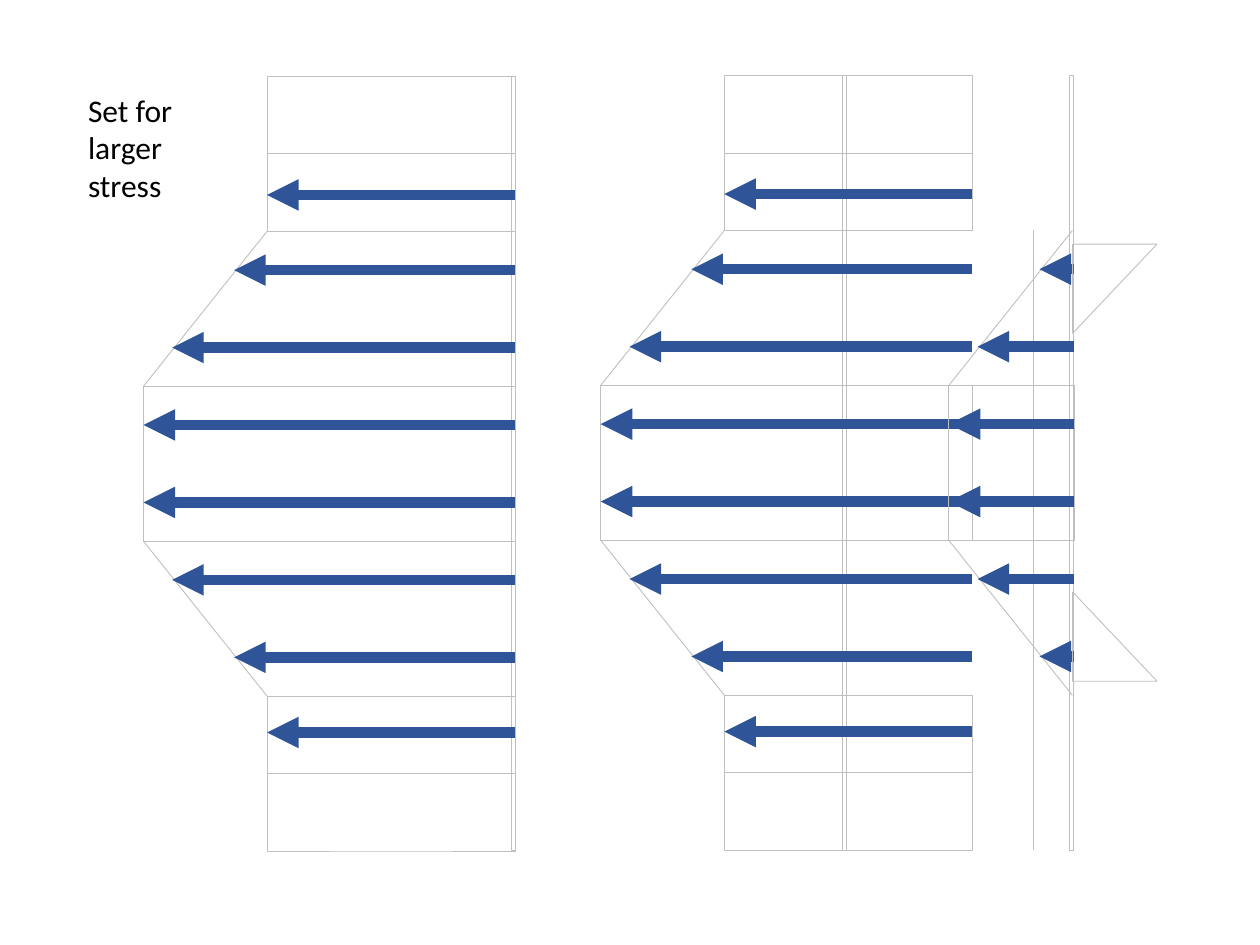
import dataclasses

import pptx
import pptx.dml.color
import pptx.enum.shapes
import pptx.oxml
import pptx.oxml.ns
import pptx.util

Pt = pptx.util.Pt
RGB = pptx.dml.color.RGBColor
SHAPE = pptx.enum.shapes.MSO_SHAPE
STRAIGHT = pptx.enum.shapes.MSO_CONNECTOR.STRAIGHT


@dataclasses.dataclass(frozen=True)
class Theme:
    """Colours, line weights and type of the slide."""
    outline: RGB = RGB(0xBF, 0xBF, 0xC0)
    arrow: RGB = RGB(0x2F, 0x55, 0x98)
    text: RGB = RGB(0, 0, 0)
    thin: float = 0.5
    thick: float = 6
    font: str = "Calibri"
    size: float = 18


THEME = Theme()
ROWS = 10
WAIST = 70.6
STRIP = 2.2
ARROWS = [(1.53, WAIST), (2.5, 51.8), (3.5, 16.4), (4.5, 0)]
ARROWS += [(ROWS - row, tip) for row, tip in reversed(ARROWS)]


def add_outline(shapes, kind, left, top, width, height):
    """Add an unfilled preset shape with a thin grey outline."""
    sp = shapes.add_shape(kind, Pt(left), Pt(top), Pt(width), Pt(height))
    sp.shadow.inherit = False
    sp.fill.background()
    sp.line.color.rgb = THEME.outline
    sp.line.width = Pt(THEME.thin)
    return sp


def add_line(shapes, x1, y1, x2, y2, color=THEME.outline, weight=THEME.thin):
    """Add a straight connector without a shadow."""
    cx = shapes.add_connector(STRAIGHT, Pt(x1), Pt(y1), Pt(x2), Pt(y2))
    cx.line.color.rgb = color
    cx.line.width = Pt(weight)
    effects = pptx.oxml.ns.qn("a:effectLst")
    cx._element.spPr.append(pptx.oxml.parse_xml(
        f'<a:effectLst {pptx.oxml.ns.nsdecls("a")}/>'))
    return cx


def add_arrow(shapes, x1, y, x2):
    """Add a thick horizontal arrow pointing at x2."""
    cx = add_line(shapes, x1, y, x2, y, THEME.arrow, THEME.thick)
    cx.line._get_or_add_ln().append(pptx.oxml.parse_xml(
        f'<a:tailEnd {pptx.oxml.ns.nsdecls("a")} type="triangle"/>'))


def add_profile(shapes, box, strip, guide=None):
    """Draw a stress profile whose arrows start at the right of the box."""
    left, top, width, height = box
    right, step = left + width, height / ROWS
    neck = left + WAIST
    has_ends = width > WAIST + STRIP

    def y(row):
        return top + row * step

    add_outline(shapes, SHAPE.RECTANGLE, left, y(4), width, 2 * step)
    add_line(shapes, left, y(6), neck, y(8))
    add_line(shapes, neck, y(2), left, y(4))
    if guide is not None:
        add_line(shapes, left + guide, y(2), left + guide, y(ROWS))
    if has_ends:
        for first, middle in ((0, 1), (8, 9)):
            add_outline(shapes, SHAPE.RECTANGLE, neck, y(first), right - neck, 2 * step)
            add_line(shapes, neck, y(middle), right, y(middle))
    add_outline(shapes, SHAPE.RECTANGLE, left + strip, top, STRIP, height)
    group = shapes.add_group_shape()
    for row, tip in ARROWS:
        if has_ends or tip < WAIST:
            add_arrow(group.shapes, right, y(row), left + tip)


def add_wedges(shapes, box):
    """Place mirrored right triangles at the top and bottom of the box."""
    left, top, width, height = box
    depth = 51
    upper = add_outline(shapes, SHAPE.RIGHT_TRIANGLE, left, top, width, depth)
    upper._element.spPr.xfrm.set("flipV", "1")
    add_outline(shapes, SHAPE.RIGHT_TRIANGLE, left, top + height - depth, width, depth)


def add_note(shapes, box, text):
    """Write a wrapped note in the box."""
    tf = shapes.add_textbox(*map(Pt, box)).text_frame
    tf.word_wrap = True
    tf.text = text
    font = tf.paragraphs[0].runs[0].font
    font.name, font.size = THEME.font, Pt(THEME.size)
    font.color.rgb = THEME.text


def main():
    """Build and save the slide."""
    prs = pptx.Presentation()
    prs.slide_width, prs.slide_height = Pt(720), Pt(540)
    shapes = prs.slides.add_slide(prs.slide_layouts[6]).shapes
    top, height = 43.2, 442.6
    add_profile(shapes, (82, top + 0.5, 212.5, height), strip=210.3, guide=212.5)
    add_profile(shapes, (343.3, top, 212.4, height), strip=138.4, guide=247.1)
    add_profile(shapes, (542.2, top, 71.6, height), strip=69.1)
    add_wedges(shapes, (613, 139.5, 48.2, 249.8))
    add_note(shapes, (43.2, 48.2, 71.3, 72.7), "Set for larger stress")
    prs.save("out.pptx")


if __name__ == "__main__":
    main()
